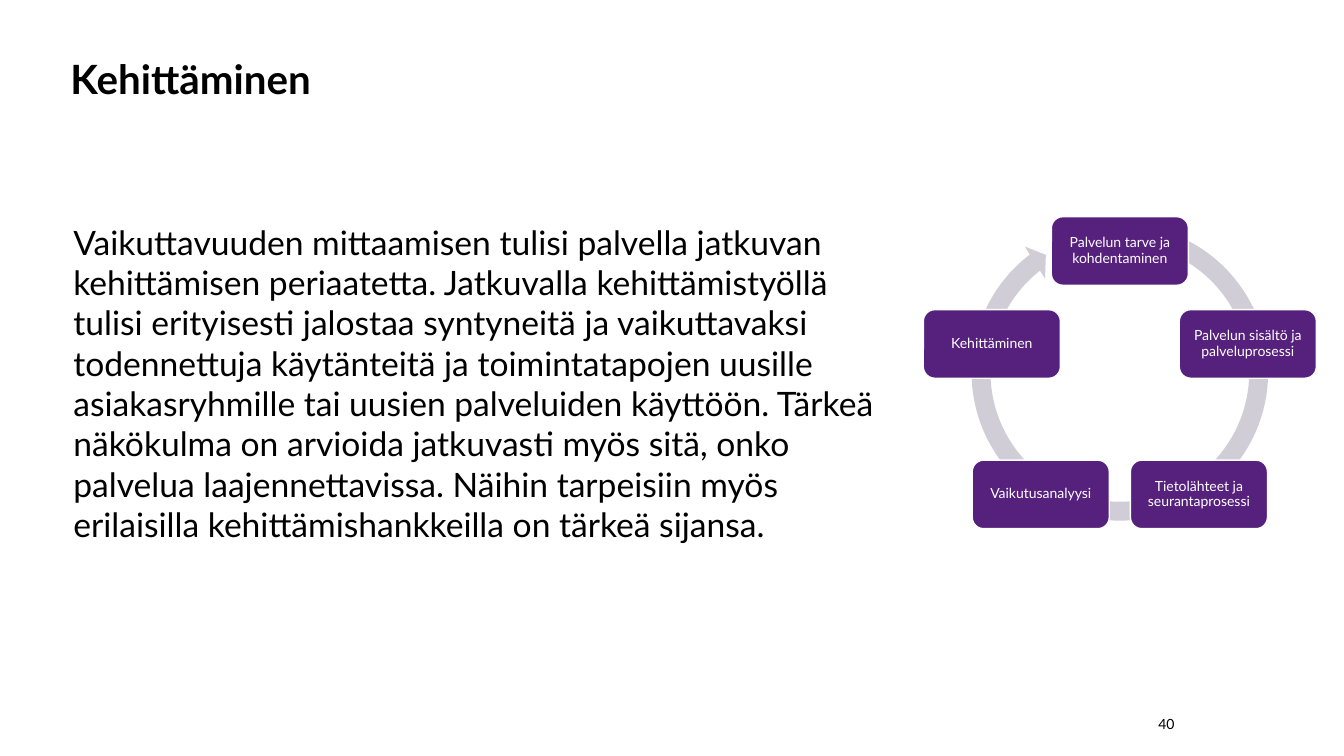
"""Build the slide on continuous development with its five-step service cycle."""
import math
from dataclasses import dataclass

from pptx import Presentation
from pptx import util as u
from pptx.dml.color import RGBColor
from pptx.enum import shapes, text

CELL = u.Inches(0.1)
COLUMNS, ROWS = 133.33, 75
FONT = "Lato"
BLACK, WHITE, PURPLE, GREY = "000000", "FFFFFF", "56207D", "D1CDD7"
CYCLE_COLUMN, CYCLE_ROW, CYCLE_RADIUS = 111.1, 38.25, 13.35
STEP_WIDTH, STEP_HEIGHT = 13.6, 6.8
ARROW_SIZE = 31.3
ARROW_ADJUSTMENTS = (0.06, 3.31, 139.38, 172.88, 0.06)
STEPS = (
    "Palvelun tarve ja kohdentaminen",
    "Palvelun sisältö ja palveluprosessi",
    "Tietolähteet ja seurantaprosessi",
    "Vaikutusanalyysi",
    "Kehittäminen",
)
BODY = (
    "Vaikuttavuuden mittaamisen tulisi palvella jatkuvan kehittämisen periaatetta. "
    "Jatkuvalla kehittämistyöllä tulisi erityisesti jalostaa syntyneitä ja vaikuttavaksi "
    "todennettuja käytänteitä ja toimintatapojen uusille asiakasryhmille tai uusien "
    "palveluiden käyttöön. Tärkeä näkökulma on arvioida jatkuvasti myös sitä, onko "
    "palvelua laajennettavissa. Näihin tarpeisiin myös erilaisilla kehittämishankkeilla "
    "on tärkeä sijansa."
)


@dataclass(frozen=True)
class Area:
    column: float
    row: float
    width: float
    height: float

    def lengths(self) -> list[int]:
        return [round(cells * CELL) for cells in (self.column, self.row, self.width, self.height)]


def centred(column: float, row: float, width: float, height: float) -> Area:
    return Area(column - width / 2, row - height / 2, width, height)


def colour(value: str) -> RGBColor:
    return RGBColor.from_string(value)


def write(box, words: str, *, size: float, ink: str = BLACK, bold: bool = False,
          align=text.PP_ALIGN.LEFT, anchor=text.MSO_ANCHOR.MIDDLE,
          spacing: float = 1.0, inset: float | None = None) -> None:
    frame = box.text_frame
    frame.word_wrap = True
    frame.vertical_anchor = anchor
    if inset is not None:
        frame.margin_left = frame.margin_right = u.Inches(inset)
        frame.margin_top = frame.margin_bottom = u.Inches(inset)
    para = frame.paragraphs[0]
    para.alignment = align
    para.line_spacing = spacing
    span = para.add_run()
    span.text = words
    span.font.name = FONT
    span.font.size = u.Pt(size)
    span.font.bold = bold
    span.font.color.rgb = colour(ink)


def add_text(page, area: Area, words: str, **style) -> None:
    write(page.shapes.add_textbox(*area.lengths()), words, **style)


def add_filled(page, kind, area: Area, fill: str):
    shape = page.shapes.add_shape(kind, *area.lengths())
    shape.shadow.inherit = False
    shape.fill.solid()
    shape.fill.fore_color.rgb = colour(fill)
    shape.line.fill.background()
    return shape


def add_cycle(page) -> None:
    ring = centred(CYCLE_COLUMN, 36.95, ARROW_SIZE, ARROW_SIZE)
    arrow = add_filled(page, shapes.MSO_SHAPE.CIRCULAR_ARROW, ring, GREY)
    for index, value in enumerate(ARROW_ADJUSTMENTS):
        arrow.adjustments[index] = value
    for index, words in enumerate(STEPS):
        angle = math.tau * index / len(STEPS)
        area = centred(CYCLE_COLUMN + CYCLE_RADIUS * math.sin(angle),
                       CYCLE_ROW - CYCLE_RADIUS * math.cos(angle),
                       STEP_WIDTH, STEP_HEIGHT)
        step = add_filled(page, shapes.MSO_SHAPE.ROUNDED_RECTANGLE, area, PURPLE)
        step.line.color.rgb = colour(WHITE)
        step.line.width = u.Pt(1)
        write(step, words, size=10, ink=WHITE, align=text.PP_ALIGN.CENTER,
              spacing=0.9, inset=0.04)


def main() -> None:
    deck = Presentation()
    deck.slide_width, deck.slide_height = round(COLUMNS * CELL), ROWS * CELL
    page = deck.slides.add_slide(deck.slide_layouts[6])
    add_text(page, Area(6, 5, 96.8, 5.6), "Kehittäminen", size=28.8, bold=True)
    add_text(page, Area(6.3, 21.5, 81.6, 53.5), BODY, size=24, anchor=text.MSO_ANCHOR.TOP)
    add_text(page, Area(111.5, 69.8, 6, 4), "40", size=10, align=text.PP_ALIGN.RIGHT)
    add_cycle(page)
    deck.save("out.pptx")


if __name__ == "__main__":
    main()
